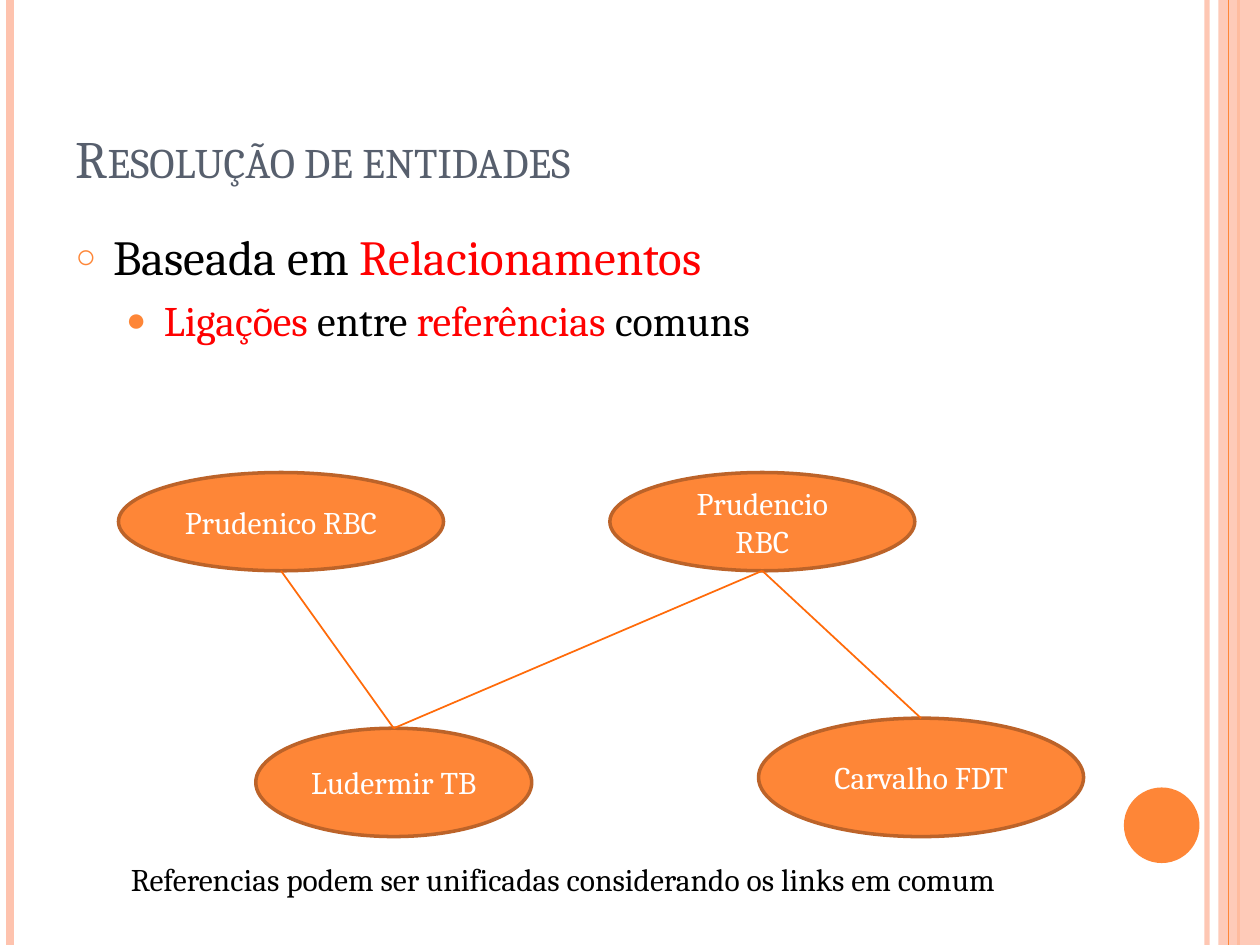
from lxml.etree import SubElement
from pptx import Presentation
from pptx.dml.color import RGBColor
from pptx.enum.shapes import MSO_CONNECTOR, MSO_SHAPE
from pptx.enum.text import MSO_ANCHOR, MSO_AUTO_SIZE, PP_ALIGN
from pptx.oxml.ns import qn
from pptx.util import Inches, Pt

ORANGE, PEACH, EDGE, LINK = "FE8637", "FEC3AE", "BC6329", "FF6B0A"
SLATE, BLACK, RED, WHITE = "575F6D", "000000", "FF0000", "FFFFFF"


def rgb(code):
    return RGBColor.from_string(code)


def fade(fill, percent):
    """Set the opacity of a solid fill inside a shape or line element."""
    color = fill.find(qn("a:solidFill"))[0]
    SubElement(color, qn("a:alpha"), val=str(percent * 1000))


class Deck:
    face = "Cambria"

    def __init__(self, slide):
        self.slide = slide
        self.shapes = slide.shapes

    def font(self, font, size, color=None):
        font.name = self.face
        font.size = Pt(size)
        if color:
            font.color.rgb = rgb(color)

    def place(self, shape, box):
        shape.left, shape.top, shape.width, shape.height = map(Inches, box)

    def title(self, text, box):
        shape = self.shapes.title
        self.place(shape, box)
        frame = shape.text_frame
        frame.auto_size = MSO_AUTO_SIZE.NONE
        frame.vertical_anchor = MSO_ANCHOR.BOTTOM
        para = frame.paragraphs[0]
        para.alignment = PP_ALIGN.LEFT
        run = para.add_run()
        run.text = text
        self.font(run.font, 30, SLATE)
        run.font._element.set("cap", "small")

    def bullet(self, para, char, scale, indent):
        props = para._p.get_or_add_pPr()
        props.set("marL", str(Inches(indent)))
        props.set("indent", str(Inches(-0.3)))
        color = SubElement(props, qn("a:buClr"))
        SubElement(color, qn("a:srgbClr"), val=ORANGE)
        SubElement(props, qn("a:buSzPct"), val=str(scale * 1000))
        SubElement(props, qn("a:buChar"), char=char)

    def body(self, items, box):
        shape = self.shapes.placeholders[1]
        self.place(shape, box)
        frame = shape.text_frame
        frame.auto_size = MSO_AUTO_SIZE.NONE
        for level, (char, scale, indent, size, parts) in enumerate(items):
            para = frame.add_paragraph() if level else frame.paragraphs[0]
            para.level = level
            self.bullet(para, char, scale, indent)
            para.space_before = Pt(5 if level else 0)
            for text, color in parts:
                run = para.add_run()
                run.text = text
                self.font(run.font, size, color)

    def shape(self, kind, box, fill, edge=None):
        shape = self.shapes.add_shape(kind, *map(Inches, box))
        shape.shadow.inherit = False
        shape.fill.solid()
        shape.fill.fore_color.rgb = rgb(fill)
        if edge:
            shape.line.color.rgb = rgb(edge)
            shape.line.width = Pt(2)
        else:
            shape.line.fill.background()
        return shape

    def node(self, text, box):
        shape = self.shape(MSO_SHAPE.OVAL, box, ORANGE, EDGE)
        shape.text_frame.word_wrap = True
        para = shape.text_frame.paragraphs[0]
        para.text = text
        para.alignment = PP_ALIGN.CENTER
        self.font(para.font, 18, WHITE)
        return shape

    def line(self, start, end, color, width):
        line = self.shapes.add_connector(MSO_CONNECTOR.STRAIGHT, *start, *end)
        line.line.color.rgb = rgb(color)
        line.line.width = Pt(width)
        SubElement(line._element.spPr, qn("a:effectLst"))
        return line

    def rule(self, x, color, width):
        """Draw a line down the full height of the slide."""
        return self.line((Inches(x), 0), (Inches(x), Inches(7.5)), color, width)

    def link(self, upper, lower):
        """Join the foot of one node to the top of another."""
        start = upper.left + upper.width // 2, upper.top + upper.height
        end = lower.left + lower.width // 2, lower.top
        self.line(start, end, LINK, 1)

    def note(self, text, box):
        frame = self.shapes.add_textbox(*map(Inches, box)).text_frame
        frame.word_wrap = False
        para = frame.paragraphs[0]
        para.text = text
        self.font(para.font, 18, BLACK)


def main():
    prs = Presentation()
    prs.slide_width, prs.slide_height = Inches(10), Inches(7.5)
    deck = Deck(prs.slides.add_slide(prs.slide_layouts[1]))

    edge = deck.rule(9.58, PEACH, 3)
    fade(edge.line._ln, 93)
    deck.rule(0.08, PEACH, 4.5)
    deck.rule(9.83, ORANGE, 1.5)
    band = deck.shape(MSO_SHAPE.RECTANGLE, (9.67, 0, 0.33, 7.5), PEACH)
    fade(band._element.spPr, 87)
    deck.rule(9.75, ORANGE, 0.75)
    deck.shape(MSO_SHAPE.OVAL, (8.92, 6.25, 0.6, 0.6), ORANGE)

    deck.title("Resolução de entidades", (0.5, 0.3, 8.17, 1.25))
    deck.body([
        ("○", 70, 0.3, 28, [("Baseada em ", BLACK), ("Relacionamentos", RED)]),
        ("●", 80, 0.7, 24, [("Ligações ", RED), ("entre ", BLACK),
                            ("referências ", RED), ("comuns", BLACK)]),
    ], (0.5, 1.75, 8.17, 5.33))

    typo = deck.node("Prudenico RBC", (0.94, 3.75, 2.58, 0.78))
    right = deck.node("Prudencio RBC", (4.84, 3.75, 2.42, 0.78))
    shared = deck.node("Ludermir TB", (2.03, 5.78, 2.19, 0.86))
    other = deck.node("Carvalho FDT", (6.02, 5.7, 2.58, 0.94))
    for upper, lower in ((right, shared), (right, other), (typo, shared)):
        deck.link(upper, lower)

    deck.note("Referencias podem ser unificadas considerando os links em comum",
              (0.94, 6.78, 7.11, 0.4))
    prs.save("out.pptx")


if __name__ == "__main__":
    main()
